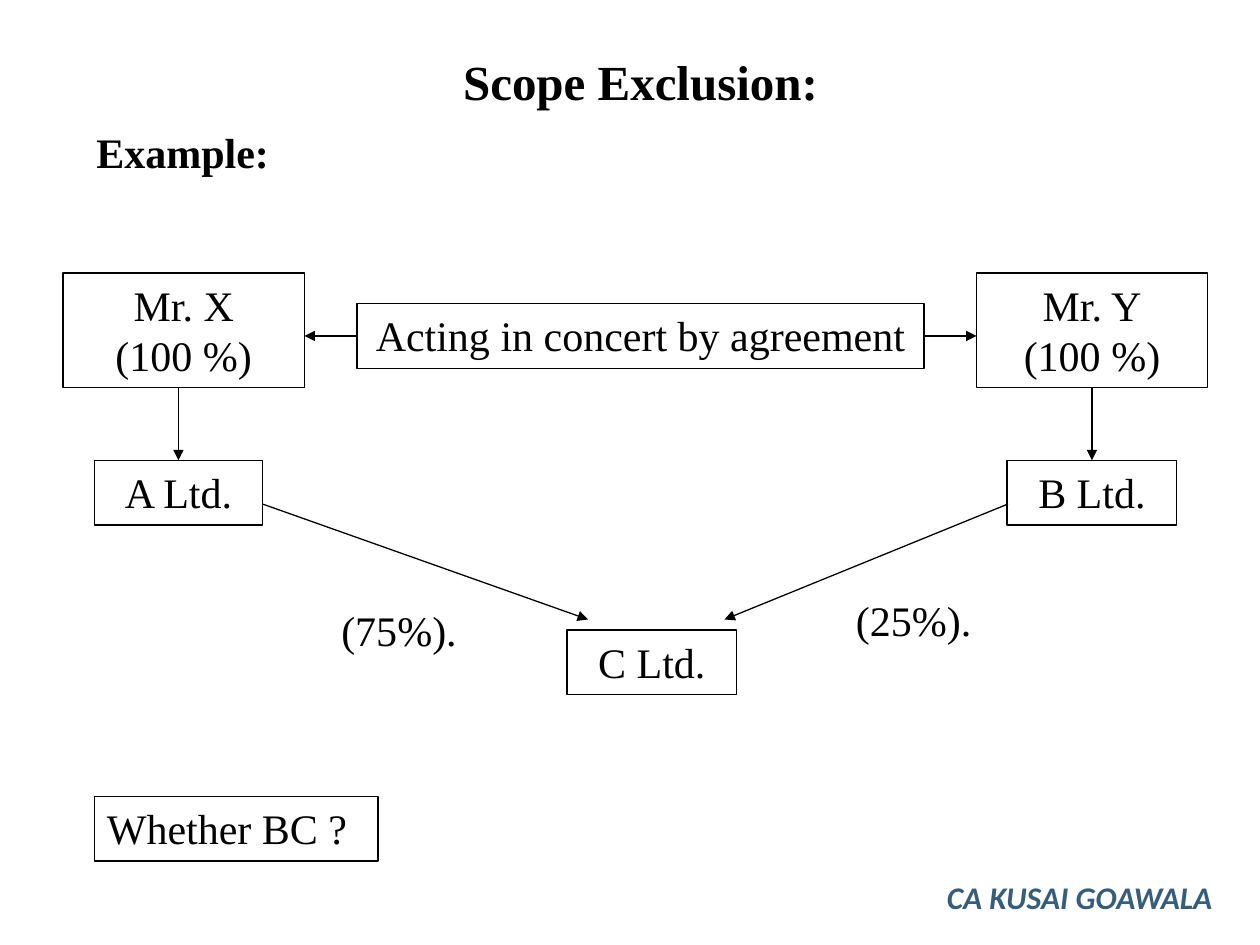
from lxml import etree
from pptx import Presentation
from pptx.dml.color import RGBColor
from pptx.enum import shapes, text
from pptx.oxml import ns
from pptx.util import Pt

BLACK = "000000"
SERIF = "Times New Roman"
LEFT, CENTER = text.PP_ALIGN.LEFT, text.PP_ALIGN.CENTER
TOP, SIDE_LEFT, BOTTOM, SIDE_RIGHT = range(4)

# name: (left, top, width, height, alignment, lines)
BOXES = {
    "X": (36, 156, 138, 65.5, CENTER, ["Mr. X", "(100 %)"]),
    "Y": (558, 156, 132, 65.5, CENTER, ["Mr. Y", "(100 %)"]),
    "agreement": (204, 173.5, 324, 37, CENTER, ["Acting in concert by agreement"]),
    "A": (54, 263, 96, 37, CENTER, ["A Ltd."]),
    "B": (575.5, 263, 97, 37, CENTER, ["B Ltd."]),
    "C": (324, 360, 97, 37, CENTER, ["C Ltd."]),
    "question": (54, 455, 162, 37, LEFT, ["Whether BC ?"]),
}
SHARES = [(180, 342, 96, 36, "(75%)."), (474, 336, 96, 36, "(25%).")]
# (from, to): each end is a point or a (box name, side)
ARROWS = [
    ((102, 221.5), ("A", TOP)),
    (("Y", BOTTOM), ("B", TOP)),
    (("agreement", SIDE_LEFT), (174, 192)),
    (("agreement", SIDE_RIGHT), (558, 192)),
    ((150, 288), (336, 354)),
    ((576, 288), (414, 354)),
]


def rgb(value):
    return RGBColor.from_string(value)


def write(p, words, size=24, font=SERIF, color=BLACK, bold=False, italic=False, align=CENTER):
    p.alignment = align
    r = p.add_run()
    r.text = words
    f = r.font
    f.size, f.name, f.bold, f.italic = Pt(size), font, bold, italic
    f.color.rgb = rgb(color)


def add_text(s, left, top, width, height):
    sp = s.shapes.add_textbox(Pt(left), Pt(top), Pt(width), Pt(height))
    sp.text_frame.word_wrap = True
    return sp.text_frame


def add_box(s, left, top, width, height, align, lines):
    sp = s.shapes.add_shape(shapes.MSO_SHAPE.RECTANGLE,
                            Pt(left), Pt(top), Pt(width), Pt(height))
    sp.shadow.inherit = False
    sp.fill.background()
    sp.line.color.rgb = rgb(BLACK)
    sp.line.width = Pt(0.75)
    tf = sp.text_frame
    tf.word_wrap = True
    tf.vertical_anchor = text.MSO_ANCHOR.TOP
    for i, words in enumerate(lines):
        write(tf.add_paragraph() if i else tf.paragraphs[0], words, align=align)
    return sp


def add_arrow(s, boxes, start, end):
    line = s.shapes.add_connector(shapes.MSO_CONNECTOR.STRAIGHT, 0, 0, 0, 0)
    for name, (a, b) in (("begin", start), ("end", end)):
        if a in boxes:
            join = line.begin_connect if name == "begin" else line.end_connect
            join(boxes[a], b)
        elif name == "begin":
            line.begin_x, line.begin_y = Pt(a), Pt(b)
        else:
            line.end_x, line.end_y = Pt(a), Pt(b)
    line.line.color.rgb = rgb(BLACK)
    line.line.width = Pt(0.75)
    ln = line.line._get_or_add_ln()
    etree.SubElement(ln, ns.qn("a:tailEnd"), type="triangle")
    etree.SubElement(line._element.spPr, ns.qn("a:effectLst"))


def main():
    prs = Presentation()
    prs.slide_width, prs.slide_height = Pt(720), Pt(540)
    s = prs.slides.add_slide(prs.slide_layouts[6])

    tf = add_text(s, 48, 26, 636, 104)
    write(tf.paragraphs[0], "Scope Exclusion:", size=28, bold=True)
    example = tf.add_paragraph()
    example.space_before = Pt(9)
    write(example, "Example:", bold=True, align=LEFT)

    boxes = {name: add_box(s, *spec) for name, spec in BOXES.items()}
    for start, end in ARROWS:
        add_arrow(s, boxes, start, end)
    for *place, share in SHARES:
        write(add_text(s, *place).paragraphs[0], share)

    write(add_text(s, 534, 498, 186, 29).paragraphs[0], "CA KUSAI GOAWALA",
          size=18, font="Calibri", color="355D7E", bold=True, italic=True, align=LEFT)
    prs.save("out.pptx")


if __name__ == "__main__":
    main()
